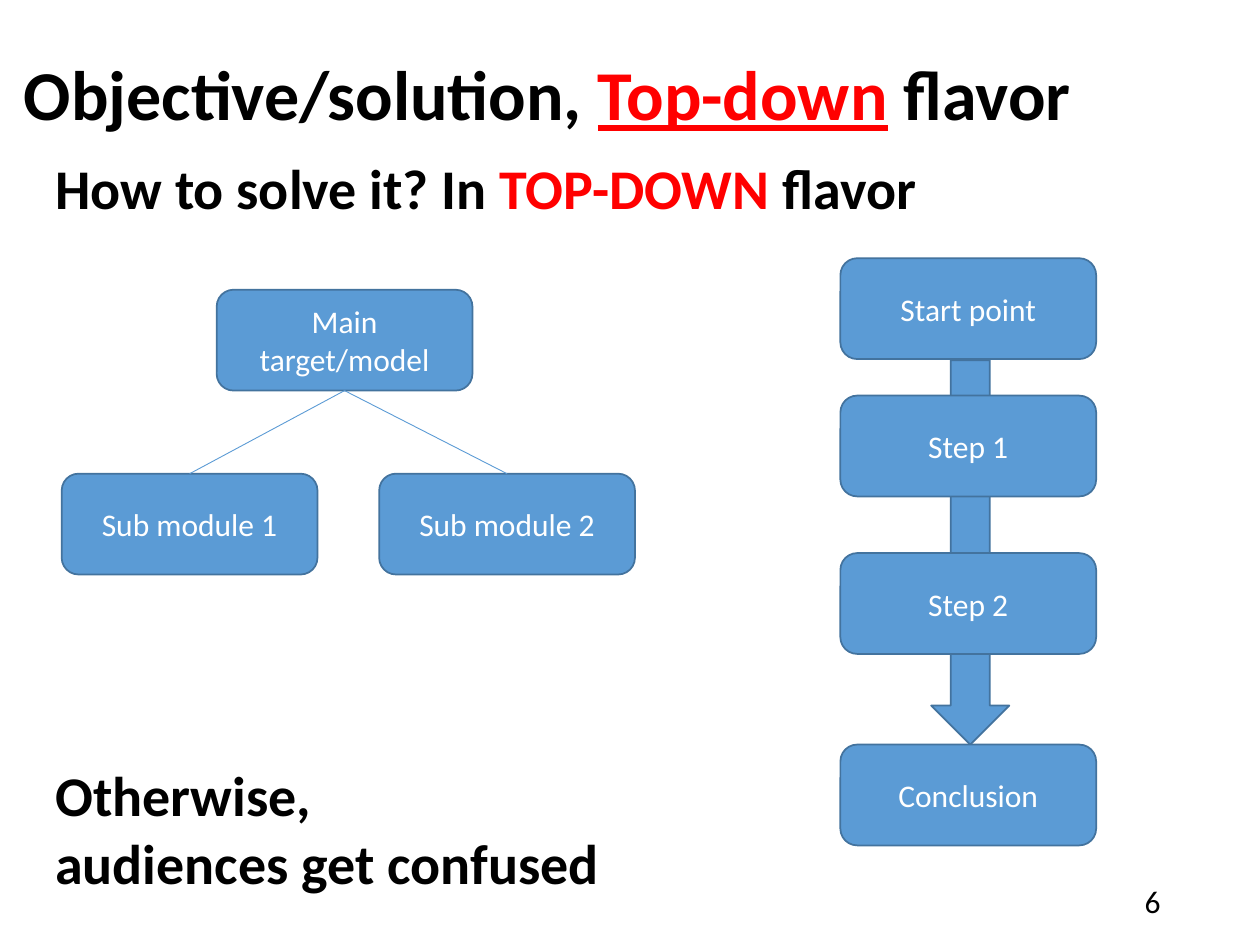
"""Build a slide that explains solving a problem in top-down flavor."""
import lxml.etree
import pptx
import pptx.dml.color
import pptx.enum.shapes
import pptx.enum.text
import pptx.oxml.ns
import pptx.util

Inches = pptx.util.Inches
SHAPES = pptx.enum.shapes.MSO_SHAPE
ALIGN = pptx.enum.text.PP_ALIGN
ANCHOR = pptx.enum.text.MSO_ANCHOR
AUTO_SIZE = pptx.enum.text.MSO_AUTO_SIZE

BLUE, DARK_BLUE = "5B9BD5", "43739E"
BLACK, WHITE, RED = "000000", "FFFFFF", "FF0000"
BOX_WIDTH, BOX_HEIGHT = 2.03, 0.8
BOTTOM, TOP = 2, 0


def color(value):
    """Turn a hex string into a colour."""
    return pptx.dml.color.RGBColor.from_string(value)


def format_span(span, size, shade=BLACK, bold=False, underline=False):
    """Set the font of one run."""
    span.font.name = "Calibri"
    span.font.size = pptx.util.Pt(size)
    span.font.bold = bold
    span.font.underline = underline
    span.font.color.rgb = color(shade)


def fill_highlighted(para, before, highlight, after, size, underline=False):
    """Write a bold line whose middle part is red."""
    parts = ((before, BLACK), (highlight, RED), (after, BLACK))
    for text, shade in parts:
        span = para.add_run()
        span.text = text
        format_span(span, size, shade, True, underline and shade == RED)


def add_title(page):
    """Place and fill the title placeholder."""
    title = page.shapes.title
    title.left, title.top = Inches(0.09), Inches(0.13)
    title.width, title.height = Inches(9.91), Inches(1.3)
    frame = title.text_frame
    frame.auto_size = AUTO_SIZE.NONE
    frame.vertical_anchor = ANCHOR.MIDDLE
    para = frame.paragraphs[0]
    para.alignment = ALIGN.LEFT
    para.line_spacing = 0.9
    fill_highlighted(para, "Objective/solution, ", "Top-down", " flavor", 40, True)


def add_text_box(page, left, top, width, height):
    """Add an empty text box that grows with its text and return its frame."""
    box = page.shapes.add_textbox(Inches(left), Inches(top), Inches(width), Inches(height))
    frame = box.text_frame
    frame.word_wrap = False
    frame.auto_size = AUTO_SIZE.SHAPE_TO_FIT_TEXT
    return frame


def add_blue_shape(page, kind, left, top, width, height):
    """Add a blue preset shape with a thin dark outline."""
    shape = page.shapes.add_shape(kind, Inches(left), Inches(top), Inches(width), Inches(height))
    shape.shadow.inherit = False
    shape.fill.solid()
    shape.fill.fore_color.rgb = color(BLUE)
    shape.line.color.rgb = color(DARK_BLUE)
    shape.line.width = pptx.util.Pt(1)
    return shape


def add_box(page, text, left, top):
    """Add a rounded box with a centred label."""
    box = add_blue_shape(page, SHAPES.ROUNDED_RECTANGLE, left, top, BOX_WIDTH, BOX_HEIGHT)
    frame = box.text_frame
    frame.text = text
    frame.word_wrap = True
    frame.vertical_anchor = ANCHOR.MIDDLE
    para = frame.paragraphs[0]
    para.alignment = ALIGN.CENTER
    format_span(para.runs[0], 18, WHITE)
    return box


def add_branch(page, parent, child):
    """Join the bottom of a parent box to the top of a child box."""
    branch = page.shapes.add_connector(pptx.enum.shapes.MSO_CONNECTOR.STRAIGHT, 0, 0, 0, 0)
    branch.begin_connect(parent, BOTTOM)
    branch.end_connect(child, TOP)
    branch.line.color.rgb = color(BLUE)
    branch.line.width = pptx.util.Pt(0.5)
    lxml.etree.SubElement(branch._element.spPr, pptx.oxml.ns.qn("a:effectLst"))


def add_module_tree(page):
    """Draw the main target with its two sub modules."""
    target = add_box(page, "Main target/model", 1.72, 2.3)
    for text, left in (("Sub module 1", 0.49), ("Sub module 2", 3.01)):
        add_branch(page, target, add_box(page, text, left, 3.76))


def add_step_flow(page):
    """Draw the steps on top of one long down arrow."""
    add_blue_shape(page, SHAPES.DOWN_ARROW, 7.39, 2.86, 0.62, 3.05)
    steps = (("Start point", 2.05), ("Step 1", 3.14), ("Step 2", 4.39), ("Conclusion", 5.91))
    for text, top in steps:
        add_box(page, text, 6.67, top)


def add_warning(page):
    """Add the closing remark."""
    frame = add_text_box(page, 0.34, 5.99, 4.57, 1.18)
    frame.text = "Otherwise,\naudiences get confused"
    for para in frame.paragraphs:
        format_span(para.runs[0], 32, bold=True)


def add_page_number(page):
    """Add the page number at the lower right."""
    frame = add_text_box(page, 7.06, 6.95, 2.25, 0.4)
    frame.word_wrap = True
    frame.auto_size = AUTO_SIZE.NONE
    frame.vertical_anchor = ANCHOR.MIDDLE
    frame.text = "6"
    para = frame.paragraphs[0]
    para.alignment = ALIGN.RIGHT
    format_span(para.runs[0], 18)


def main():
    """Build and save the deck."""
    deck = pptx.Presentation()
    deck.slide_width, deck.slide_height = Inches(10), Inches(7.5)
    page = deck.slides.add_slide(deck.slide_layouts.get_by_name("Title Only"))
    add_title(page)
    question = add_text_box(page, 0.34, 1.17, 7.11, 0.64)
    fill_highlighted(question.paragraphs[0], "How to solve it? In ", "TOP-DOWN", " flavor", 32)
    add_module_tree(page)
    add_step_flow(page)
    add_warning(page)
    add_page_number(page)
    deck.save("out.pptx")


if __name__ == "__main__":
    main()
